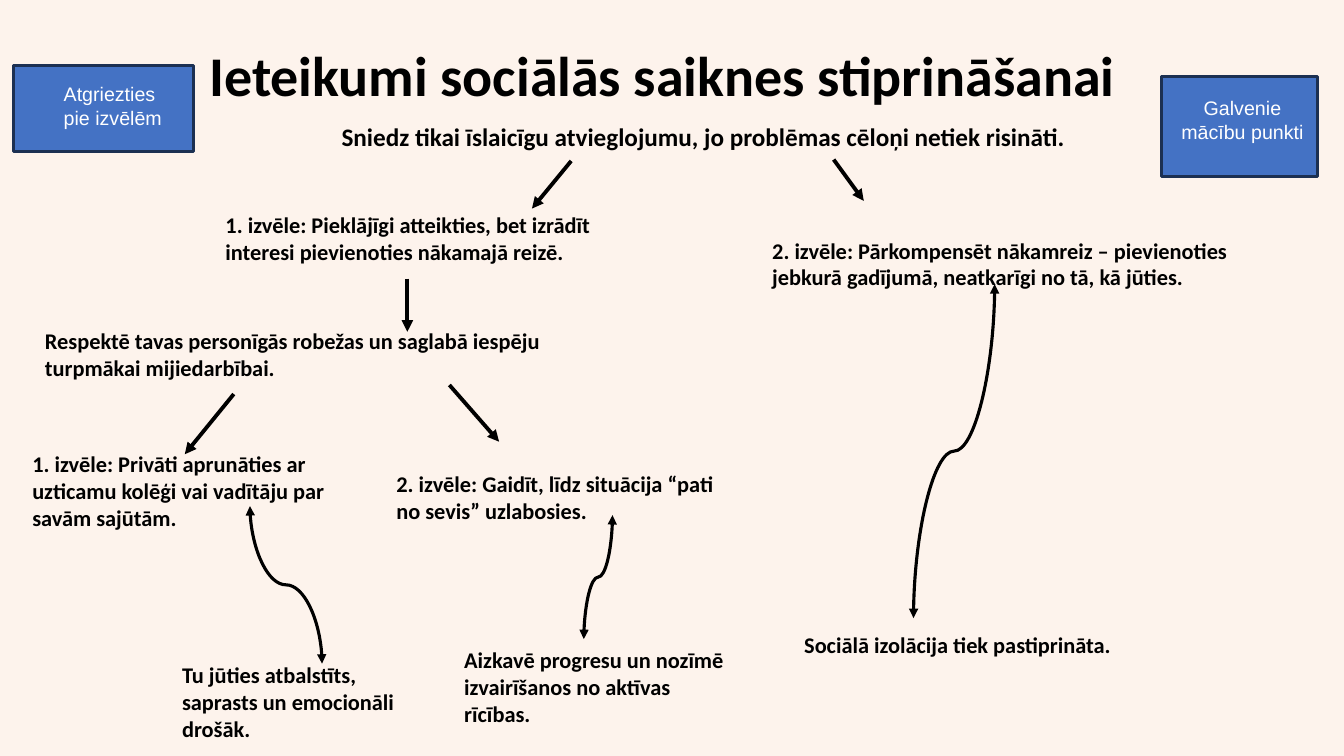
from dataclasses import dataclass

from lxml.etree import SubElement
from pptx import Presentation
from pptx.dml.color import RGBColor
from pptx.enum.shapes import MSO_CONNECTOR, MSO_SHAPE
from pptx.enum.text import MSO_ANCHOR, MSO_AUTO_SIZE, PP_ALIGN
from pptx.oxml.ns import qn
from pptx.util import Pt


@dataclass(frozen=True)
class Theme:
    background = RGBColor(0xFD, 0xF3, 0xEC)
    ink = RGBColor(0, 0, 0)
    button = RGBColor(0x44, 0x72, 0xC4)
    button_edge = RGBColor(0x1C, 0x30, 0x52)
    button_text = RGBColor(0xFF, 0xFF, 0xFF)
    font = "Calibri"
    button_font = "Arial"
    title = 40
    lead = 18
    body = 16
    label = 14


theme = Theme()


def write(tf, text, size, align=PP_ALIGN.LEFT, font=theme.font, color=theme.ink, bold=True):
    """Fill a top-anchored, wrapping frame with one run of text."""
    tf.word_wrap = True
    tf.auto_size = MSO_AUTO_SIZE.NONE
    tf.vertical_anchor = MSO_ANCHOR.TOP
    p = tf.paragraphs[0]
    p.alignment = align
    r = p.add_run()
    r.text = text
    r.font.name = font
    r.font.size = Pt(size)
    r.font.bold = bold
    r.font.color.rgb = color


def add_arrow(kind, x1, y1, x2, y2, width, ends):
    c = s.shapes.add_connector(kind, Pt(x1), Pt(y1), Pt(x2), Pt(y2))
    c.line.color.rgb = theme.ink
    c.line.width = Pt(width)
    ln = c.line._get_or_add_ln()
    for end in ends:
        SubElement(ln, qn(f"a:{end}"), type="triangle")
    SubElement(c._element.spPr, qn("a:effectLst"))
    return c


prs = Presentation()
prs.slide_width, prs.slide_height = Pt(960), Pt(540)
s = prs.slides.add_slide(prs.slide_layouts[5])
s.background.fill.solid()
s.background.fill.fore_color.rgb = theme.background

title = s.shapes.title
title.left, title.top, title.width, title.height = Pt(-7), Pt(1.5), Pt(960), Pt(80)
write(title.text_frame, "Ieteikumi sociālās saiknes stiprināšanai", theme.title, PP_ALIGN.CENTER)
title.text_frame.paragraphs[0].line_spacing = 1.5

# Tree texts: left, top, width, height, size, alignment, text
texts = [
    (96.5, 83, 812, 30, theme.lead, PP_ALIGN.CENTER,
     "Sniedz tikai īslaicīgu atvieglojumu, jo problēmas cēloņi netiek risināti."),
    (154, 147.5, 299, 46, theme.body, PP_ALIGN.LEFT,
     "1. izvēle: Pieklājīgi atteikties, bet izrādīt interesi pievienoties nākamajā reizē."),
    (544.5, 165.5, 348, 46, theme.body, PP_ALIGN.LEFT,
     "2. izvēle: Pārkompensēt nākamreiz – pievienoties jebkurā gadījumā, neatkarīgi no tā, kā jūties."),
    (25, 230, 398, 46, theme.body, PP_ALIGN.LEFT,
     "Respektē tavas personīgās robežas un saglabā iespēju turpmākai mijiedarbībai."),
    (16, 318, 266, 66, theme.body, PP_ALIGN.LEFT,
     "1. izvēle: Privāti aprunāties ar uzticamu kolēģi vai vadītāju par savām sajūtām."),
    (276, 332.5, 245.5, 46, theme.body, PP_ALIGN.LEFT,
     "2. izvēle: Gaidīt, līdz situācija “pati no sevis” uzlabosies."),
    (123, 469, 194, 66, theme.body, PP_ALIGN.LEFT,
     "Tu jūties atbalstīts, saprasts un emocionāli drošāk."),
    (324.5, 458, 210, 66, theme.body, PP_ALIGN.LEFT,
     "Aizkavē progresu un nozīmē izvairīšanos no aktīvas rīcības."),
    (473, 447, 422, 27, theme.body, PP_ALIGN.CENTER,
     "Sociālā izolācija tiek pastiprināta."),
]
for left, top, width, height, size, align, text in texts:
    box = s.shapes.add_textbox(Pt(left), Pt(top), Pt(width), Pt(height))
    write(box.text_frame, text, size, align)

# Straight arrows from a statement to its choices
for x1, y1, x2, y2 in [
    (408, 115, 380, 149),
    (595.5, 114, 617, 143.5),
    (291, 199, 291, 237),
    (167, 281.5, 132, 324.5),
    (321, 275, 356.5, 315.5),
]:
    add_arrow(MSO_CONNECTOR.STRAIGHT, x1, y1, x2, y2, 2.75, ["tailEnd"])

# Curved links from a choice down to its outcome, turned to leave vertically
for x1, y1, x2, y2 in [
    (710.5, 203, 652.5, 441.5),
    (437.5, 368, 417, 456.5),
    (178.5, 361.5, 230, 474),
]:
    side = 1 if x2 < x1 else -1
    cx, cy = (x1 + x2) / 2, (y1 + y2) / 2
    half_run, half_rise = side * (y2 - y1) / 2, abs(x2 - x1) / 2
    c = add_arrow(MSO_CONNECTOR.CURVE, cx - half_run, cy - half_rise,
                  cx + half_run, cy + half_rise, 2.25, ["headEnd", "tailEnd"])
    c._element.spPr.xfrm.set("rot", str((90 if side == 1 else 270) * 60000))

# Buttons: left, top, width, height, insets (left, top, right), alignment, text
buttons = [
    (829.5, 54.5, 111.5, 71.5, (11.5, 14, 7), PP_ALIGN.CENTER, "Galvenie mācību punkti"),
    (9.5, 47, 129, 61, (36, 11.5, 13.5), PP_ALIGN.LEFT, "Atgriezties pie izvēlēm"),
]
for left, top, width, height, insets, align, text in buttons:
    sp = s.shapes.add_shape(MSO_SHAPE.RECTANGLE, Pt(left), Pt(top), Pt(width), Pt(height))
    sp.shadow.inherit = False
    sp.fill.solid()
    sp.fill.fore_color.rgb = theme.button
    sp.line.color.rgb = theme.button_edge
    sp.line.width = Pt(2)
    tf = sp.text_frame
    tf.margin_left, tf.margin_top, tf.margin_right = map(Pt, insets)
    write(tf, text, theme.label, align, theme.button_font, theme.button_text, False)

prs.save("out.pptx")
